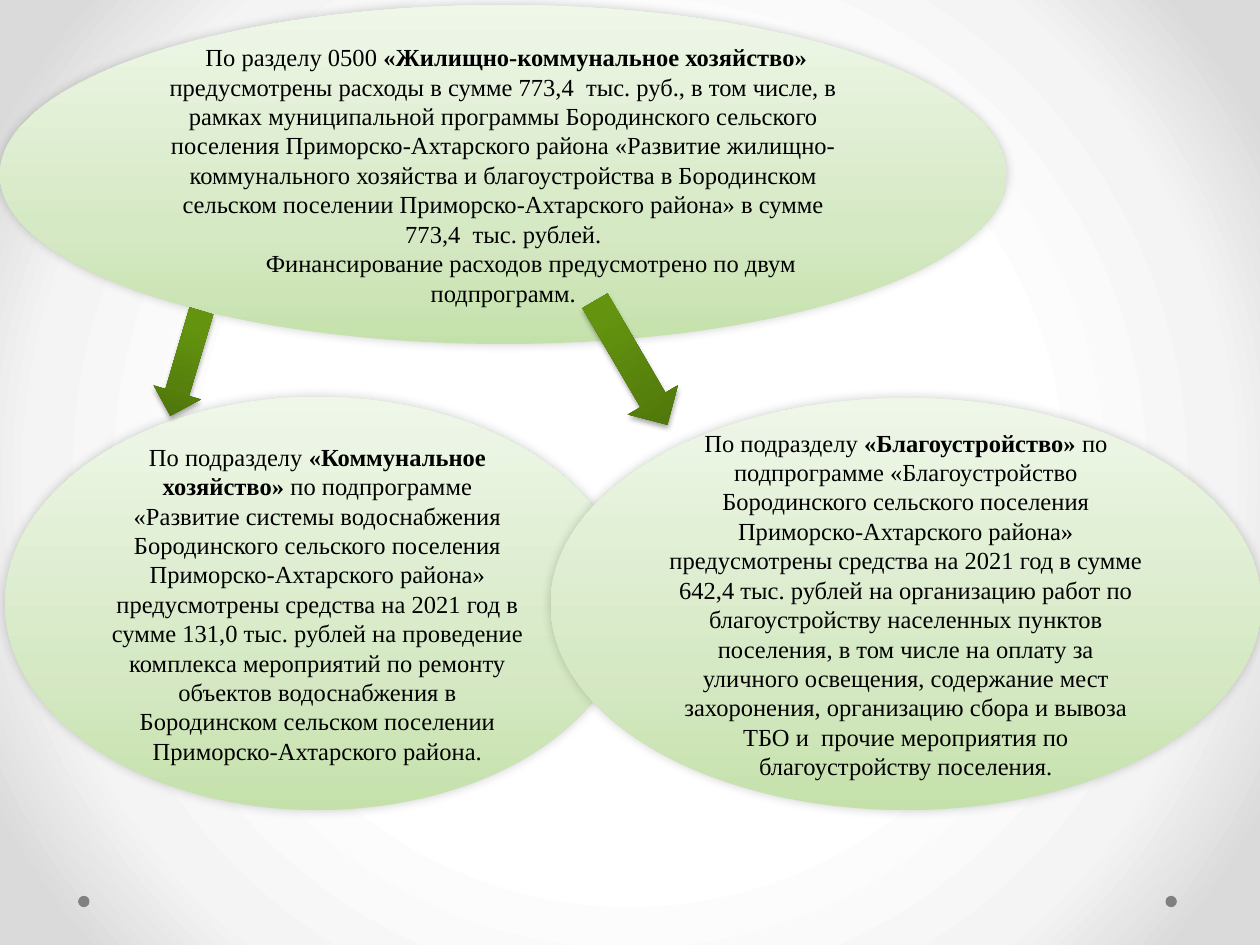
from dataclasses import dataclass

from lxml.etree import SubElement
from pptx import Presentation
from pptx.dml.color import RGBColor
from pptx.enum.shapes import MSO_SHAPE
from pptx.enum.text import MSO_ANCHOR, PP_ALIGN
from pptx.oxml.ns import qn
from pptx.util import Inches, Pt


@dataclass(frozen=True)
class Theme:
    font: str = "Times New Roman"
    size: int = 14
    text: str = "000000"
    dot: str = "808080"
    # Gradient stops: position in percent, colour
    background: tuple = ((50, "FFFFFF"), (76, "F4F4F4"), (92, "DADADA"))
    oval: tuple = ((0, "C5E1AB"), (35, "D6E9C5"), (100, "EFF7E9"))
    arrow: tuple = ((0, "4D720B"), (80, "64940F"), (100, "65970C"))
    # Shadows: opacity in percent, blur and distance in points, direction in degrees
    oval_shadow: tuple = (20, 6, 0, 225)
    arrow_shadow: tuple = (35, 3.1, 1.8, 90)


def add_colour(parent, colour):
    return SubElement(parent, qn("a:srgbClr"), val=colour)


def set_gradient(fill, owner, stops, angle=None):
    """Fill with the stops: linear at the angle, or circular from the centre without one."""
    fill.gradient()
    gradient = next(owner.iter(qn("a:gradFill")))
    for child in list(gradient):
        gradient.remove(child)
    gradient.set("rotWithShape", "1")
    stop_list = SubElement(gradient, qn("a:gsLst"))
    for position, colour in stops:
        add_colour(SubElement(stop_list, qn("a:gs"), pos=str(position * 1000)), colour)
    if angle is None:
        circle = SubElement(gradient, qn("a:path"), path="circle")
        SubElement(circle, qn("a:fillToRect"), {side: "50000" for side in "ltrb"})
    else:
        SubElement(gradient, qn("a:lin"), ang=str(angle * 60000), scaled="0")


def set_shadow(shape, opacity, blur, distance, direction):
    effects = shape._element.spPr.find(qn("a:effectLst"))
    shadow = SubElement(effects, qn("a:outerShdw"), {
        "blurRad": str(Pt(blur)), "dist": str(Pt(distance)),
        "dir": str(direction * 60000), "rotWithShape": "0"})
    SubElement(add_colour(shadow, "000000"), qn("a:alpha"), val=str(opacity * 1000))


class SlideBuilder:
    def __init__(self, slide, theme):
        self.slide, self.theme = slide, theme

    def background(self):
        set_gradient(self.slide.background.fill, self.slide._element, self.theme.background)

    def shape(self, kind, box):
        shape = self.slide.shapes.add_shape(kind, *map(Inches, box))
        shape.shadow.inherit = False
        shape.line.fill.background()
        return shape

    def dot(self, left):
        dot = self.shape(MSO_SHAPE.OVAL, (left, 7.11, 0.09, 0.09))
        dot.fill.solid()
        dot.fill.fore_color.rgb = RGBColor.from_string(self.theme.dot)

    def oval(self, box, paragraphs):
        """Draw an oval; each paragraph is a first-line indent and (text, bold) runs."""
        oval = self.shape(MSO_SHAPE.OVAL, box)
        set_gradient(oval.fill, oval._element, self.theme.oval, 270)
        set_shadow(oval, *self.theme.oval_shadow)
        frame = oval.text_frame
        for name, value in {"word_wrap": True, "vertical_anchor": MSO_ANCHOR.MIDDLE}.items():
            setattr(frame, name, value)
        for index, (indent, runs) in enumerate(paragraphs):
            paragraph = frame.add_paragraph() if index else frame.paragraphs[0]
            paragraph.alignment = PP_ALIGN.CENTER
            if indent:
                paragraph._p.get_or_add_pPr().set("indent", str(Inches(indent)))
            for text, bold in runs:
                self.run(paragraph, text, bold)

    def run(self, paragraph, text, bold):
        run = paragraph.add_run()
        run.text = text
        style = {"name": self.theme.font, "size": Pt(self.theme.size), "bold": bold}
        for name, value in style.items():
            setattr(run.font, name, value)
        run.font.color.rgb = RGBColor.from_string(self.theme.text)

    def arrow(self, box, rotation):
        arrow = self.shape(MSO_SHAPE.DOWN_ARROW, box)
        arrow.rotation = rotation
        set_gradient(arrow.fill, arrow._element, self.theme.arrow, 270)
        set_shadow(arrow, *self.theme.arrow_shadow)


HOUSING = [
    (0, [
        (" По разделу 0500 ", False),
        ("«Жилищно-коммунальное хозяйство»", True),
        (" предусмотрены расходы в сумме 773,4  тыс. руб., в том числе, в рамках "
         "муниципальной программы Бородинского сельского поселения Приморско-Ахтарского "
         "района «Развитие жилищно-коммунального хозяйства и благоустройства в Бородинском "
         "сельском поселении Приморско-Ахтарского района» в сумме 773,4  тыс. рублей.", False),
    ]),
    (0.44, [("Финансирование расходов предусмотрено по двум подпрограмм.", False)]),
]
UTILITIES = [(0, [
    ("По подразделу ", False),
    ("«Коммунальное хозяйство»", True),
    (" по подпрограмме «Развитие системы водоснабжения Бородинского сельского поселения "
     "Приморско-Ахтарского района» предусмотрены средства на 2021 год в сумме 131,0 тыс. "
     "рублей на проведение комплекса мероприятий по ремонту объектов водоснабжения в "
     "Бородинском сельском поселении Приморско-Ахтарского района.", False),
])]
IMPROVEMENT = [(0, [
    ("По подразделу ", False),
    ("«Благоустройство»", True),
    (" по подпрограмме «Благоустройство Бородинского сельского поселения "
     "Приморско-Ахтарского района» предусмотрены средства на 2021 год в сумме 642,4 тыс. "
     "рублей на организацию работ по благоустройству населенных пунктов поселения, в том "
     "числе на оплату за уличного освещения, содержание мест захоронения, организацию "
     "сбора и вывоза ТБО и  прочие мероприятия по благоустройству поселения.", False),
])]


def main():
    presentation = Presentation()
    presentation.slide_width, presentation.slide_height = Inches(10), Inches(7.5)
    slide = presentation.slides.add_slide(presentation.slide_layouts[6])
    builder = SlideBuilder(slide, Theme())
    builder.background()
    for left in (9.25, 0.62):
        builder.dot(left)
    builder.oval((0, 0.04, 7.99, 2.69), HOUSING)
    builder.oval((0.04, 3.15, 4.96, 3.28), UTILITIES)
    builder.oval((4.37, 3.16, 5.64, 3.27), IMPROVEMENT)
    builder.arrow((1.28, 2.45, 0.39, 0.87), 16.5)
    builder.arrow((4.78, 2.31, 0.46, 1.14), 329.7)
    presentation.save("out.pptx")


if __name__ == "__main__":
    main()
